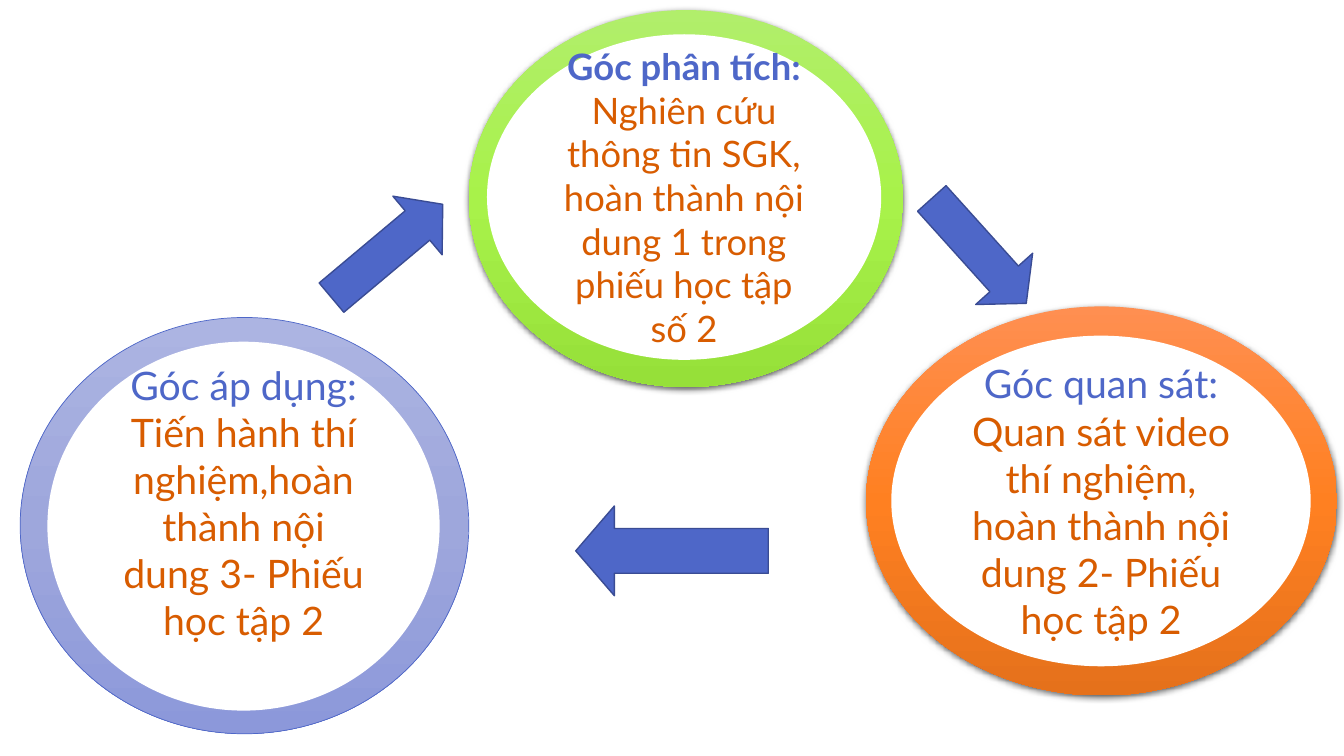
from pptx import Presentation
from pptx.dml.color import RGBColor
from pptx.enum import shapes, text
from pptx.oxml import parse_xml
from pptx.oxml.ns import nsdecls, qn
from pptx.util import Inches, Pt

BLUE = RGBColor(0x4E, 0x67, 0xC8)
DARK_BLUE = RGBColor(0x3A, 0x4C, 0x94)
ORANGE = RGBColor(0xD8, 0x5C, 0x00)
WHITE = RGBColor(0xFF, 0xFF, 0xFF)
FONT = "Lato"
LINE_HEIGHT = 1.2

# Boxes are left, top, width, height in inches.
CORNERS = [
    dict(heading="Góc phân tích:",
         task="Nghiên cứu thông tin SGK, hoàn thành nội dung 1 trong phiếu học tập số 2",
         ring=(4.65, 0.1, 4.31, 3.74), disc=(4.83, 0.34, 3.91, 3.23),
         shades=("B1EE6B", "A8F24A", "96E039"),
         size=26, bold=True, outlined=False, lines_below=0),
    dict(heading="Góc quan sát:",
         task="Quan sát video thí nghiệm, hoàn thành nội dung 2- Phiếu học tập 2",
         ring=(8.59, 3.04, 4.67, 3.86), disc=(8.84, 3.33, 4.16, 3.28),
         shades=("FF8F51", "FF8021", "E5711B"),
         size=28, bold=False, outlined=False, lines_below=0),
    dict(heading="Góc áp dụng:",
         task="Tiến hành thí nghiệm,hoàn thành nội dung 3- Phiếu học tập 2",
         ring=(0.2, 3.15, 4.45, 4.13), disc=(0.47, 3.39, 3.89, 3.66),
         shades=("ACB4E2", "9EA7DC", "8C98DA"),
         size=28, bold=False, outlined=True, lines_below=1),
]
ARROWS = [  # box, rotation in degrees
    ((9.01, 2.11, 1.4, 0.76), 48),
    ((5.71, 5.02, 1.91, 0.89), 180),
    ((3.12, 2.11, 1.44, 0.76), 320),
]


def add_preset(slide, preset, box):
    shape = slide.shapes.add_shape(preset, *map(Inches, box))
    shape.shadow.inherit = False
    return shape


def shade_downwards(shape, shades):
    """Fill with a three-stop gradient from top to bottom."""
    stops = "".join(
        f'<a:gs pos="{position}"><a:srgbClr val="{shade}"/></a:gs>'
        for position, shade in zip((0, 50000, 100000), shades))
    gradient = parse_xml(
        f'<a:gradFill {nsdecls("a")}><a:gsLst>{stops}</a:gsLst>'
        '<a:lin ang="5400000" scaled="0"/></a:gradFill>')
    shape._element.spPr.find(qn("a:prstGeom")).addnext(gradient)


def drop_shadow(shape):
    shape._element.spPr.find(qn("a:effectLst")).append(parse_xml(
        f'<a:outerShdw {nsdecls("a")} blurRad="{Pt(4.5)}" dist="{Pt(1.5)}" '
        'dir="5400000" algn="ctr" rotWithShape="0"><a:srgbClr val="000000">'
        '<a:alpha val="63000"/></a:srgbClr></a:outerShdw>'))


def add_ring(slide, corner):
    ring = add_preset(slide, shapes.MSO_SHAPE.OVAL, corner["ring"])
    shade_downwards(ring, corner["shades"])
    if corner["outlined"]:
        ring.line.color.rgb = BLUE
        ring.line.width = Pt(0.5)
    else:
        ring.line.fill.background()
        drop_shadow(ring)


def add_disc(slide, corner):
    disc = add_preset(slide, shapes.MSO_SHAPE.OVAL, corner["disc"])
    disc.fill.solid()
    disc.fill.fore_color.rgb = WHITE
    disc.line.fill.background()

    frame = disc.text_frame
    frame.word_wrap = True
    frame.vertical_anchor = text.MSO_ANCHOR.MIDDLE
    frame.margin_bottom = Inches(0.05) + Pt(
        corner["lines_below"] * corner["size"] * LINE_HEIGHT)
    frame.text = corner["heading"] + "\n" + corner["task"]
    styles = ((BLUE, corner["bold"]), (ORANGE, False))
    for paragraph, (color, bold) in zip(frame.paragraphs, styles):
        paragraph.alignment = text.PP_ALIGN.CENTER
        paragraph.font.name = FONT
        paragraph.font.size = Pt(corner["size"])
        paragraph.font.bold = bold
        paragraph.font.color.rgb = color


def add_arrow(slide, box, rotation):
    arrow = add_preset(slide, shapes.MSO_SHAPE.RIGHT_ARROW, box)
    arrow.rotation = rotation
    arrow.adjustments[0] = 0.5
    arrow.adjustments[1] = 0.43
    arrow.fill.solid()
    arrow.fill.fore_color.rgb = BLUE
    arrow.line.color.rgb = DARK_BLUE
    arrow.line.width = Pt(1)


def main():
    deck = Presentation()
    deck.slide_width, deck.slide_height = Inches(13.33), Inches(7.5)
    slide = deck.slides.add_slide(deck.slide_layouts[6])
    for corner in CORNERS:
        add_ring(slide, corner)
        add_disc(slide, corner)
    for box, rotation in ARROWS:
        add_arrow(slide, box, rotation)
    deck.save("out.pptx")


if __name__ == "__main__":
    main()
